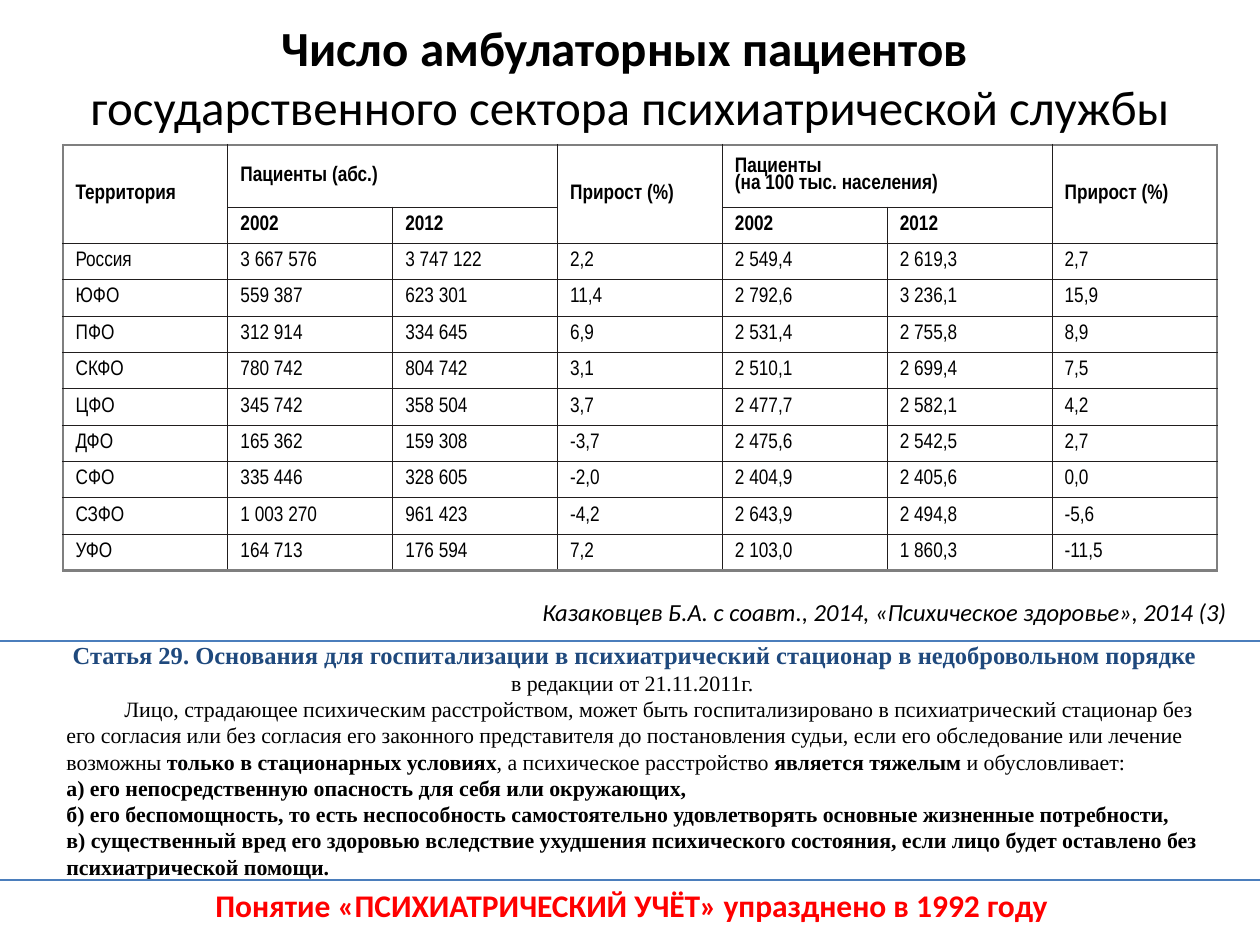
from collections import namedtuple
from dataclasses import dataclass
from lxml.etree import SubElement
from pptx import Presentation
from pptx.dml.color import RGBColor
from pptx.enum.shapes import MSO_CONNECTOR as CONNECTOR
from pptx.enum.text import MSO_ANCHOR as ANCHOR, MSO_AUTO_SIZE as AUTO, PP_ALIGN as ALIGN
from pptx.oxml import parse_xml
from pptx.oxml.ns import nsdecls, qn
from pptx.util import Pt

SCALE = 914400 / 126  # EMU in one px
Box = namedtuple("Box", "x y w h")


@dataclass(frozen=True)
class Theme:
    black: str = "000000"
    navy: str = "1F497D"
    red: str = "FF0000"
    rule: str = "4B7EBC"
    grid: str = "211E1E"
    frame: str = "7F7F7F"
    sans: str = "Calibri"
    narrow: str = "Arial Narrow"
    serif: str = "Times New Roman"
    title: float = 28
    footer: float = 18
    lead: float = 14
    law: float = 12.5
    cell: float = 12


THEME = Theme()

HEADERS = [  # row, column, row span, column span, label
    (0, 0, 2, 1, "Территория"),
    (0, 1, 1, 2, "Пациенты (абс.)"),
    (0, 3, 2, 1, "Прирост (%)"),
    (0, 4, 1, 2, "Пациенты\v(на 100 тыс. населения)"),
    (0, 6, 2, 1, "Прирост (%)"),
    (1, 1, 1, 1, "2002"),
    (1, 2, 1, 1, "2012"),
    (1, 4, 1, 1, "2002"),
    (1, 5, 1, 1, "2012"),
]
REGIONS = [
    ("Россия", "3 667 576", "3 747 122", "2,2", "2 549,4", "2 619,3", "2,7"),
    ("ЮФО", "559 387", "623 301", "11,4", "2 792,6", "3 236,1", "15,9"),
    ("ПФО", "312 914", "334 645", "6,9", "2 531,4", "2 755,8", "8,9"),
    ("СКФО", "780 742", "804 742", "3,1", "2 510,1", "2 699,4", "7,5"),
    ("ЦФО", "345 742", "358 504", "3,7", "2 477,7", "2 582,1", "4,2"),
    ("ДФО", "165 362", "159 308", "-3,7", "2 475,6", "2 542,5", "2,7"),
    ("СФО", "335 446", "328 605", "-2,0", "2 404,9", "2 405,6", "0,0"),
    ("СЗФО", "1 003 270", "961 423", "-4,2", "2 643,9", "2 494,8", "-5,6"),
    ("УФО", "164 713", "176 594", "7,2", "2 103,0", "1 860,3", "-11,5"),
]
LAW_INTRO = [  # text, bold
    ("Лицо, страдающее психическим расстройством, может быть госпитализировано в "
     "психиатрический стационар без его согласия или без согласия его законного "
     "представителя до постановления судьи, если его обследование или лечение возможны ", False),
    ("только в стационарных условиях", True),
    (", а психическое расстройство ", False),
    ("является тяжелым ", True),
    ("и обусловливает:", False),
]
LAW_GROUNDS = [
    "а) его непосредственную опасность для себя или окружающих,",
    "б) его беспомощность, то есть неспособность самостоятельно удовлетворять "
    "основные жизненные потребности,",
    "в) существенный вред его здоровью вследствие ухудшения психического состояния, "
    "если лицо будет оставлено без психиатрической помощи.",
]


def px(length):
    return round(length * SCALE)


def format_run(run, color=THEME.black, **values):
    for name, value in values.items():
        setattr(run.font, name, value)
    run.font.color.rgb = RGBColor.from_string(color)


def add_run(paragraph, text, **values):
    run = paragraph.add_run()
    run.text = text
    format_run(run, **values)


def add_frame(slide, box, **values):
    frame = slide.shapes.add_textbox(*map(px, box)).text_frame
    for name, value in {"word_wrap": True, **values}.items():
        setattr(frame, name, value)
    return frame


def add_title(slide, box):
    heading = add_frame(slide, box, vertical_anchor=ANCHOR.MIDDLE).paragraphs[0]
    heading.alignment = ALIGN.CENTER
    style = {"name": THEME.sans, "size": Pt(THEME.title)}
    add_run(heading, "Число амбулаторных пациентов ", bold=True, **style)
    heading.add_line_break()
    add_run(heading, "государственного сектора психиатрической службы", **style)


def set_borders(cell, edges):
    """edges: side letter -> True for the outer frame, in schema order."""
    properties = cell._tc.get_or_add_tcPr()
    for position, (side, outer) in enumerate(edges.items()):
        color, width = (THEME.frame, 1.5) if outer else (THEME.grid, 0.5)
        properties.insert(position, parse_xml(
            f'<a:ln{side} {nsdecls("a")} w="{Pt(width)}"><a:solidFill>'
            f'<a:srgbClr val="{color}"/></a:solidFill></a:ln{side}>'))


def fill_cell(cell, text, bold):
    cell.text = text
    paragraph = cell.text_frame.paragraphs[0]
    paragraph.line_spacing = 0.85
    for run in paragraph.runs:
        format_run(run, name=THEME.narrow, size=Pt(THEME.cell), bold=bold)


def add_patients_table(slide, box, header_height):
    row_count, column_count = len(REGIONS) + 2, len(REGIONS[0])
    table = slide.shapes.add_table(row_count, column_count, *map(px, box)).table
    table.first_row = table.horz_banding = False
    for column in table.columns:
        column.width = px(box.w / column_count)
    for r, row in enumerate(table.rows):
        row.height = px((box.h - header_height) / (row_count - 1) if r else header_height)

    # Plain cells with a thin grid and a thick outer frame
    for r in range(row_count):
        for c in range(column_count):
            cell = table.cell(r, c)
            cell.fill.background()
            cell.vertical_anchor = ANCHOR.MIDDLE
            set_borders(cell, {"L": c == 0, "R": c == column_count - 1,
                               "T": r == 0, "B": r == row_count - 1})

    # Headers, then figures
    for r, c, rows, columns, label in HEADERS:
        cell = table.cell(r, c)
        if rows * columns > 1:
            cell.merge(table.cell(r + rows - 1, c + columns - 1))
        fill_cell(cell, label, True)
    for r, region in enumerate(REGIONS, 2):
        for c, value in enumerate(region):
            fill_cell(table.cell(r, c), value, False)


def add_caption(slide, box, text, **values):
    frame = add_frame(slide, box, word_wrap=False, auto_size=AUTO.SHAPE_TO_FIT_TEXT)
    add_run(frame.paragraphs[0], text, name=THEME.sans, **values)


def add_law(slide, box):
    frame = add_frame(slide, box, auto_size=AUTO.SHAPE_TO_FIT_TEXT)
    style = {"name": THEME.serif, "size": Pt(THEME.law)}
    article = frame.paragraphs[0]
    edition, intro = frame.add_paragraph(), frame.add_paragraph()
    article.alignment = edition.alignment = ALIGN.CENTER
    add_run(article, "Статья 29. Основания для госпитализации в психиатрический стационар "
            "в недобровольном порядке", name=THEME.serif, size=Pt(THEME.lead),
            color=THEME.navy, bold=True)
    add_run(edition, "в редакции от 21.11.2011г. ", **style)
    intro._p.get_or_add_pPr().set("indent", str(px(58)))
    for text, bold in LAW_INTRO:
        add_run(intro, text, bold=bold, **style)
    for ground in LAW_GROUNDS:
        add_run(frame.add_paragraph(), ground, bold=True, **style)


def add_rule(slide, box):
    rule = slide.shapes.add_connector(CONNECTOR.STRAIGHT, px(box.x), px(box.y),
                                      px(box.x + box.w), px(box.y + box.h))
    rule.line.color.rgb = RGBColor.from_string(THEME.rule)
    rule.line.width = Pt(0.75)
    SubElement(rule._element.spPr, qn("a:effectLst"))


def main():
    deck = Presentation()
    deck.slide_width, deck.slide_height = px(1260), px(945)
    slide = deck.slides.add_slide(deck.slide_layouts[6])
    add_title(slide, Box(63, -2, 1134, 157))
    add_patients_table(slide, Box(63, 145, 1154, 426), header_height=62)
    add_caption(slide, Box(530, 591, 716, 43),
                "Казаковцев Б.А. с соавт., 2014, «Психическое здоровье», 2014 (3)",
                size=Pt(THEME.lead), italic=True)
    add_law(slide, Box(54, 634, 1162, 246))
    add_rule(slide, Box(0, 641, 1260, 0))
    add_caption(slide, Box(203, 880, 867, 50),
                "Понятие «ПСИХИАТРИЧЕСКИЙ УЧЁТ» упразднено в 1992 году",
                size=Pt(THEME.footer), color=THEME.red, bold=True)
    add_rule(slide, Box(0, 880, 1260, 0))
    deck.save("out.pptx")


if __name__ == "__main__":
    main()
